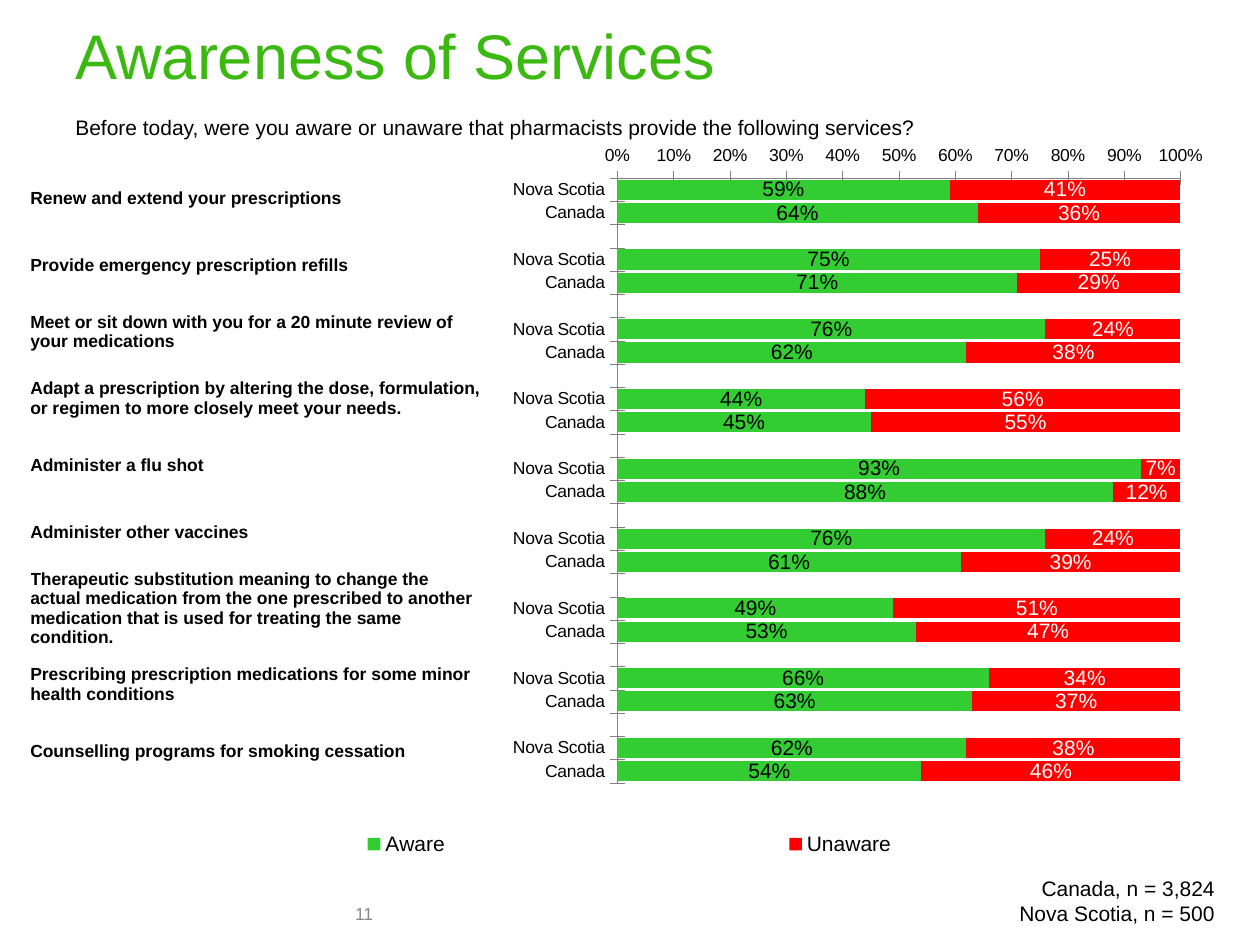
from lxml import etree
from pptx import Presentation
from pptx.chart.data import CategoryChartData
from pptx.dml.color import RGBColor
from pptx.enum import chart as chart_enum
from pptx.enum.text import MSO_ANCHOR, PP_ALIGN
from pptx.oxml.ns import qn
from pptx.util import Inches, Pt

TITLE_GREEN = RGBColor(0x3B, 0xB9, 0x10)
AWARE_GREEN = RGBColor(0x33, 0xCC, 0x33)
UNAWARE_RED = RGBColor(0xFF, 0x00, 0x00)
BLACK = RGBColor(0x00, 0x00, 0x00)
WHITE = RGBColor(0xFF, 0xFF, 0xFF)
GRAY = RGBColor(0x89, 0x89, 0x89)
AXIS_GRAY = RGBColor(0x80, 0x80, 0x80)

# Service, aware share in Nova Scotia, aware share in Canada
SERVICES = [
    ("Renew and extend your prescriptions", 0.59, 0.64),
    ("Provide emergency prescription refills", 0.75, 0.71),
    ("Meet or sit down with you for a 20 minute review of your medications", 0.76, 0.62),
    ("Adapt a prescription by altering the dose, formulation, or regimen to more "
     "closely meet your needs.", 0.44, 0.45),
    ("Administer a flu shot", 0.93, 0.88),
    ("Administer other vaccines", 0.76, 0.61),
    ("Therapeutic substitution meaning to change the actual medication from the one "
     "prescribed to another medication that is used for treating the same condition.",
     0.49, 0.53),
    ("Prescribing prescription medications for some minor health conditions", 0.66, 0.63),
    ("Counselling programs for smoking cessation", 0.62, 0.54),
]


def write_text(frame, content, size, color, align=PP_ALIGN.LEFT, bold=False):
    frame.word_wrap = True
    frame.text = content
    for paragraph in frame.paragraphs:
        paragraph.alignment = align
        for run in paragraph.runs:
            run.font.name = "Arial"
            run.font.size = Pt(size)
            run.font.bold = bold
            run.font.color.rgb = color


def set_layout(element, position, x, y, width, height, inner=False):
    """Place a chart part by fractions of the chart, at a child position."""
    for old in element.findall(qn("c:layout")):
        element.remove(old)
    layout = etree.Element(qn("c:layout"))
    manual = etree.SubElement(layout, qn("c:manualLayout"))
    settings = [("xMode", "edge"), ("yMode", "edge"),
                ("x", x), ("y", y), ("w", width), ("h", height)]
    if inner:
        settings.insert(0, ("layoutTarget", "inner"))
    for name, value in settings:
        etree.SubElement(manual, qn(f"c:{name}")).set("val", str(value))
    element.insert(position, layout)


presentation = Presentation()
presentation.slide_width = Inches(10)
presentation.slide_height = Inches(7.5)
slide = presentation.slides.add_slide(presentation.slide_layouts[5])

# Title, question, page number and sample sizes
title = slide.shapes.title
title.left, title.top = Inches(0.5), Inches(0.01)
title.width, title.height = Inches(9), Inches(0.85)
title.text_frame.vertical_anchor = MSO_ANCHOR.MIDDLE
write_text(title.text_frame, "Awareness of Services", 36, TITLE_GREEN)

question = slide.shapes.add_textbox(Inches(0.5), Inches(0.86), Inches(8.74), Inches(0.3))
write_text(question.text_frame, "Before today, were you aware or unaware that pharmacists "
           "provide the following services?", 12, BLACK)

page_number = slide.shapes.add_textbox(Inches(2.72), Inches(7.14), Inches(2.33), Inches(0.22))
page_number.text_frame.vertical_anchor = MSO_ANCHOR.MIDDLE
write_text(page_number.text_frame, "11", 10, GRAY)

samples = slide.shapes.add_textbox(Inches(4.45), Inches(6.9), Inches(5.29), Inches(0.5))
write_text(samples.text_frame, "Canada, n = 3,824\nNova Scotia, n = 500", 12, BLACK,
           PP_ALIGN.RIGHT)

# Chart: a pair of bars for each service, with an empty category between pairs
categories, aware, unaware = [], [], []
for index, (_, nova_scotia, canada) in enumerate(SERVICES):
    if index:
        categories.append("")
        aware.append(None)
        unaware.append(None)
    categories += ["Nova Scotia", "Canada"]
    aware += [nova_scotia, canada]
    unaware += [round(1 - nova_scotia, 2), round(1 - canada, 2)]

chart_data = CategoryChartData(number_format="0%")
chart_data.categories = categories
chart_data.add_series("Aware", aware)
chart_data.add_series("Unaware", unaware)
chart = slide.shapes.add_chart(
    chart_enum.XL_CHART_TYPE.BAR_STACKED_100,
    Inches(0.24), Inches(1.16), Inches(9.51), Inches(5.74), chart_data).chart
chart.has_title = False
chart.font.name = "Arial"
chart.font.size = Pt(10)
chart.font.color.rgb = BLACK

plot = chart.plots[0]
plot.gap_width = 16
plot.overlap = 100
plot.vary_by_categories = False
for series, fill_color, label_color in zip(
        plot.series, (AWARE_GREEN, UNAWARE_RED), (BLACK, WHITE)):
    series.format.fill.solid()
    series.format.fill.fore_color.rgb = fill_color
    labels = series.data_labels
    labels.show_value = True
    labels.position = chart_enum.XL_LABEL_POSITION.CENTER
    labels.number_format = "0%"
    labels.number_format_is_linked = False
    labels.font.name = "Arial"
    labels.font.size = Pt(12)
    labels.font.color.rgb = label_color

for axis in (chart.category_axis, chart.value_axis):
    axis.has_major_gridlines = False
    axis.major_tick_mark = chart_enum.XL_TICK_MARK.CROSS
    axis.minor_tick_mark = chart_enum.XL_TICK_MARK.NONE
    axis.format.line.color.rgb = AXIS_GRAY
    axis.format.line.width = Pt(0.25)
    axis.tick_labels.font.size = Pt(10)
chart.category_axis.reverse_order = True
chart.category_axis.crosses = chart_enum.XL_AXIS_CROSSES.MAXIMUM
chart.value_axis.minimum_scale = 0
chart.value_axis.maximum_scale = 1
chart.value_axis.major_unit = 0.1
chart.value_axis.tick_labels.number_format = "0%"
chart.value_axis.tick_labels.number_format_is_linked = False

chart.has_legend = True
legend = chart.legend
legend.position = chart_enum.XL_LEGEND_POSITION.RIGHT
legend.include_in_layout = True
legend.font.name = "Arial"
legend.font.size = Pt(12)
legend.font.color.rgb = BLACK
set_layout(legend._element, 1, 0, 0.94, 1, 0.05)
set_layout(chart._chartSpace.chart.plotArea, 0, 0.49, 0.04, 0.47, 0.84, inner=True)

# Service names beside the bars
table = slide.shapes.add_table(
    len(SERVICES), 1, Inches(0.24), Inches(1.31), Inches(3.58), Inches(4.88)).table
table.first_row = False
table.horz_banding = False
for row, (service, *_) in zip(table.rows, SERVICES):
    row.height = Inches(0.68 if service.startswith("Therapeutic") else 0.53)
    cell = row.cells[0]
    cell.fill.background()
    cell.vertical_anchor = MSO_ANCHOR.MIDDLE
    cell.margin_left = cell.margin_right = cell.margin_top = cell.margin_bottom = 0
    write_text(cell.text_frame, service, 10, BLACK, bold=True)

presentation.save("out.pptx")
